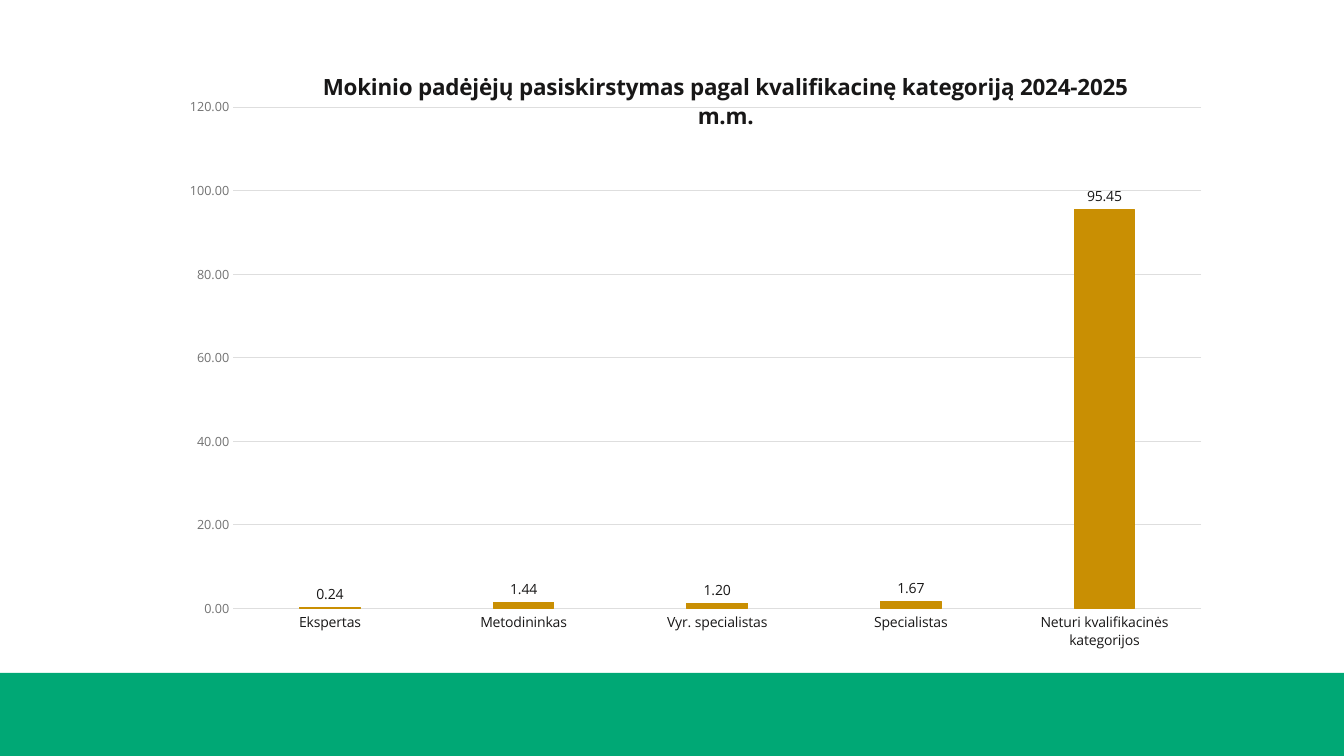
from pptx import Presentation
from pptx import util as u
from pptx.chart import data as chart_data
from pptx.dml import color
from pptx.enum import chart as ch, shapes
from pptx.oxml import ns, xmlchemy

TITLE = "Mokinio padėjėjų pasiskirstymas pagal kvalifikacinę kategoriją 2024-2025 m.m."
SHARES = {
    "Ekspertas": 0.24,
    "Metodininkas": 1.44,
    "Vyr. specialistas": 1.2,
    "Specialistas": 1.67,
    "Neturi kvalifikacinės kategorijos": 95.45,
}
COLORS = {"band": "00A875", "bar": "C98F03", "grid": "DEDEDE",
          "ink": "181717", "muted": "727272", "text": "262626"}
FONT = "Open Sans"
WIDTH, HEIGHT = 13.33, 7.5
BAND_TOP = 0.89
CHART_AREA = (0.13, 0.077, 0.777, 0.783)
PLOT_AREA = {"layoutTarget": "inner", "xMode": "edge", "yMode": "edge",
             "x": 0.056, "y": 0.083, "w": 0.927, "h": 0.848}
TITLE_AREA = {"xMode": "edge", "yMode": "edge", "x": 0.138, "y": 0.012}


def rgb(name):
    return color.RGBColor.from_string(COLORS[name])


def style_font(font, size, name, bold=False):
    values = {"name": FONT, "size": u.Pt(size), "bold": bold}
    for key, value in values.items():
        setattr(font, key, value)
    font.color.rgb = rgb(name)


def style_line(line, name):
    line.color.rgb = rgb(name)
    line.width = u.Pt(0.75)


def place(parent, index, area):
    for old in parent.findall(ns.qn("c:layout")):
        parent.remove(old)
    layout = xmlchemy.OxmlElement("c:layout")
    manual = xmlchemy.OxmlElement("c:manualLayout")
    for key, value in area.items():
        item = xmlchemy.OxmlElement(f"c:{key}")
        item.set("val", str(value))
        manual.append(item)
    layout.append(manual)
    parent.insert(index, layout)


def add_band(page):
    band = page.shapes.add_shape(
        shapes.MSO_SHAPE.RECTANGLE, 0, u.Inches(HEIGHT * BAND_TOP),
        u.Inches(WIDTH), u.Inches(HEIGHT * (1 - BAND_TOP)))
    band.shadow.inherit = False
    band.fill.solid()
    band.fill.fore_color.rgb = rgb("band")
    band.line.fill.background()


def add_category_chart(page):
    data = chart_data.CategoryChartData(number_format="0.00")
    data.categories = list(SHARES)
    data.add_series("Series 1", list(SHARES.values()))
    bounds = [u.Inches(share * side)
              for share, side in zip(CHART_AREA, (WIDTH, HEIGHT) * 2)]
    chart = page.shapes.add_chart(
        ch.XL_CHART_TYPE.COLUMN_CLUSTERED, *bounds, data).chart
    chart.has_legend = False
    style_font(chart.font, 10, "text")

    chart.has_title = True
    span = chart.chart_title.text_frame.paragraphs[0].add_run()
    span.text = TITLE
    style_font(span.font, 16, "ink", True)
    place(chart.chart_title.element if hasattr(chart.chart_title, "element")
          else chart.element.find(".//" + ns.qn("c:title")), 1, TITLE_AREA)
    place(chart.element.find(".//" + ns.qn("c:plotArea")), 0, PLOT_AREA)

    for axis, size, name in ((chart.category_axis, 10, "ink"),
                             (chart.value_axis, 9, "muted")):
        axis.major_tick_mark = axis.minor_tick_mark = ch.XL_TICK_MARK.NONE
        style_font(axis.tick_labels.font, size, name)
    style_line(chart.category_axis.format.line, "grid")
    values = chart.value_axis
    values.minimum_scale, values.maximum_scale, values.major_unit = 0, 120, 20
    values.format.line.fill.background()
    style_line(values.major_gridlines.format.line, "grid")
    values.tick_labels.number_format = "0.00"
    values.tick_labels.number_format_is_linked = False

    plot = chart.plots[0]
    plot.gap_width, plot.overlap, plot.vary_by_categories = 219, -27, False
    bars = plot.series[0]
    bars.format.fill.solid()
    bars.format.fill.fore_color.rgb = rgb("bar")
    style_line(bars.format.line, "bar")
    labels = bars.data_labels
    settings = {"show_value": True, "number_format": "0.00",
                "number_format_is_linked": False,
                "position": ch.XL_LABEL_POSITION.OUTSIDE_END}
    for key, value in settings.items():
        setattr(labels, key, value)
    style_font(labels.font, 10, "ink")


def main():
    deck = Presentation()
    deck.slide_width, deck.slide_height = u.Inches(WIDTH), u.Inches(HEIGHT)
    page = deck.slides.add_slide(deck.slide_layouts[6])
    add_band(page)
    add_category_chart(page)
    deck.save("out.pptx")


if __name__ == "__main__":
    main()
